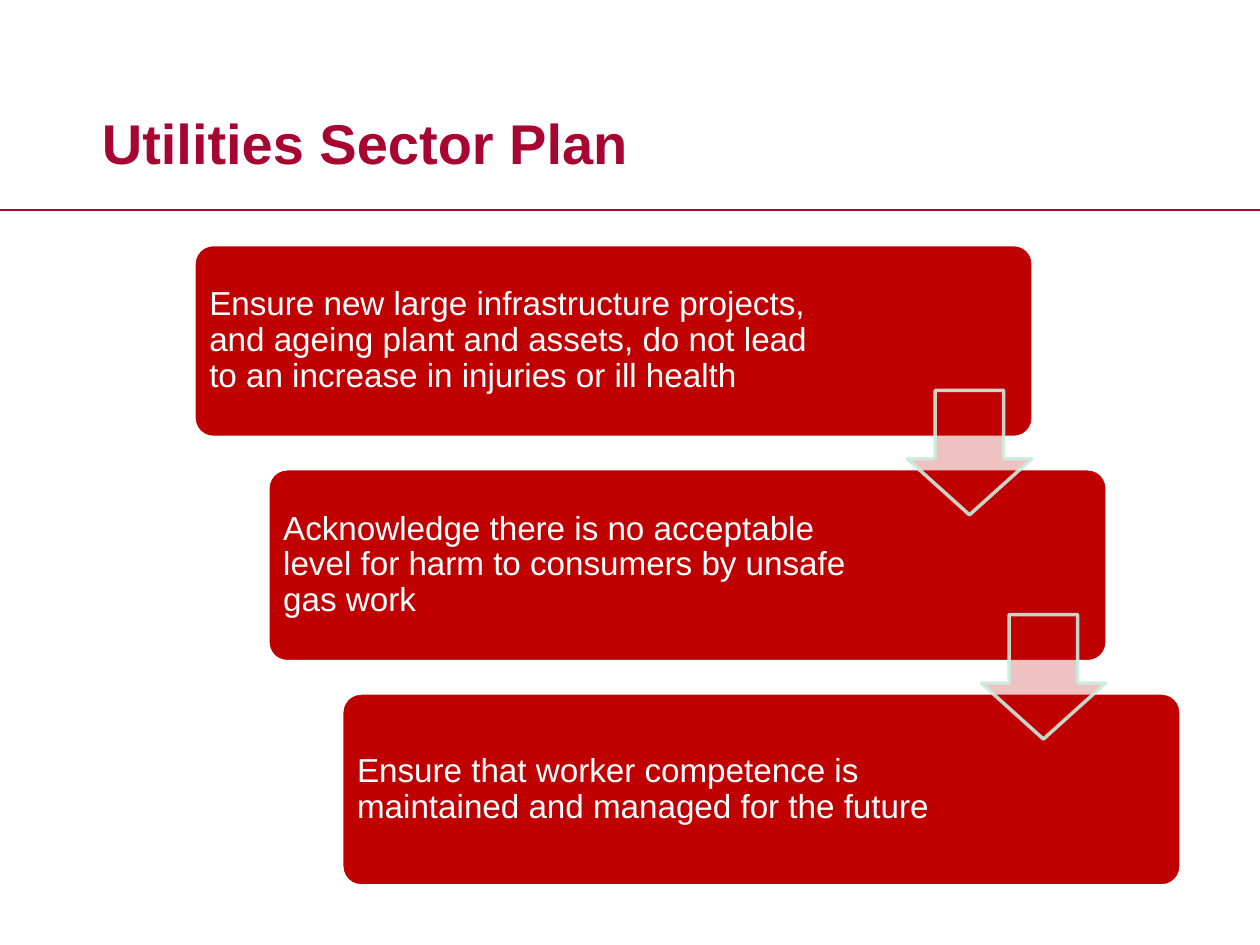
"""Build the Utilities Sector Plan slide with its three descending steps."""
from lxml.etree import SubElement
from pptx import Presentation
from pptx.dml.color import RGBColor
from pptx.enum.shapes import MSO_CONNECTOR, MSO_SHAPE as Shape
from pptx.enum.text import MSO_ANCHOR as Anchor, PP_ALIGN as Align
from pptx.oxml.ns import qn
from pptx.util import Cm, Pt

CRIMSON = RGBColor(0xA7, 0x05, 0x32)
RED = RGBColor(0xC0, 0x00, 0x00)
MINT = RGBColor(0xCC, 0xEC, 0xDE)
WHITE = RGBColor(0xFF, 0xFF, 0xFF)

STEPS = [
    "Ensure new large infrastructure projects, and ageing plant and assets, "
    "do not lead to an increase in injuries or ill health",
    "Acknowledge there is no acceptable level for harm to consumers by unsafe gas work",
    "Ensure that worker competence is maintained and managed for the future",
]
LEFT, TOP, WIDTH, HEIGHT = 3.91, 4.93, 16.92, 3.89
STEP_X, STEP_Y = 1.49, 4.52
ARROW_LEFT, ARROW_TOP, ARROW_SIZE = 18.29, 7.87, 2.51


def write(tf, text, size, color, bold=False, spacing=None):
    tf.word_wrap = True
    tf.vertical_anchor = Anchor.MIDDLE
    p = tf.paragraphs[0]
    p.alignment = Align.LEFT
    p.line_spacing = spacing
    r = p.add_run()
    r.text = text
    r.font.name, r.font.size, r.font.bold = "Arial", Pt(size), bold
    r.font.color.rgb = color


def set_alpha(fill_parent, percent):
    clr = fill_parent.find(qn("a:solidFill"))[0]
    SubElement(clr, qn("a:alpha")).set("val", str(percent * 1000))


class Deck:
    def __init__(self):
        self.prs = Presentation()
        self.prs.slide_width, self.prs.slide_height = Cm(25.4), Cm(19.05)
        self.s = self.prs.slides.add_slide(self.prs.slide_layouts[5])

    def title(self, text, x, y, w, h):
        sp = self.s.shapes.title
        sp.left, sp.top, sp.width, sp.height = Cm(x), Cm(y), Cm(w), Cm(h)
        write(sp.text_frame, text, 32, CRIMSON, bold=True)

    def rule(self, y):
        line = self.s.shapes.add_connector(
            MSO_CONNECTOR.STRAIGHT, 0, Cm(y), self.prs.slide_width, Cm(y))
        line.line.color.rgb = CRIMSON
        line.line.width = Pt(1.25)
        SubElement(line._element.spPr, qn("a:effectLst"))

    def shape(self, kind, x, y, w, h, line, adjustments):
        sp = self.s.shapes.add_shape(kind, Cm(x), Cm(y), Cm(w), Cm(h))
        sp.shadow.inherit = False
        for i, value in enumerate(adjustments):
            sp.adjustments[i] = value
        sp.fill.solid()
        sp.fill.fore_color.rgb = RED
        sp.line.color.rgb = line
        sp.line.width = Pt(2)
        return sp

    def step(self, text, x, y):
        self.shape(Shape.ROUNDED_RECTANGLE, x, y, WIDTH, HEIGHT, WHITE, [0.1])
        box = self.s.shapes.add_textbox(Cm(x + 0.11), Cm(y + 0.11), Cm(12.7), Cm(HEIGHT - 0.22))
        tf = box.text_frame
        tf.margin_left = tf.margin_top = tf.margin_bottom = Cm(0.2)
        tf.margin_right = Cm(0.3)
        write(tf, text, 19, WHITE, spacing=0.9)

    def arrow(self, x, y):
        sp = self.shape(Shape.DOWN_ARROW, x, y, ARROW_SIZE, ARROW_SIZE, MINT, [0.55, 0.45])
        spPr = sp._element.spPr
        set_alpha(spPr, 24)
        set_alpha(spPr.find(qn("a:ln")), 90)


def main():
    deck = Deck()
    deck.rule(4.24)
    deck.title("Utilities Sector Plan", 1.8, 1.68, 18.97, 2.36)
    for i, text in enumerate(STEPS):
        deck.step(text, LEFT + i * STEP_X, TOP + i * STEP_Y)
    for i in range(len(STEPS) - 1):
        deck.arrow(ARROW_LEFT + i * STEP_X, ARROW_TOP + i * STEP_Y)
    deck.prs.save("out.pptx")


if __name__ == "__main__":
    main()
